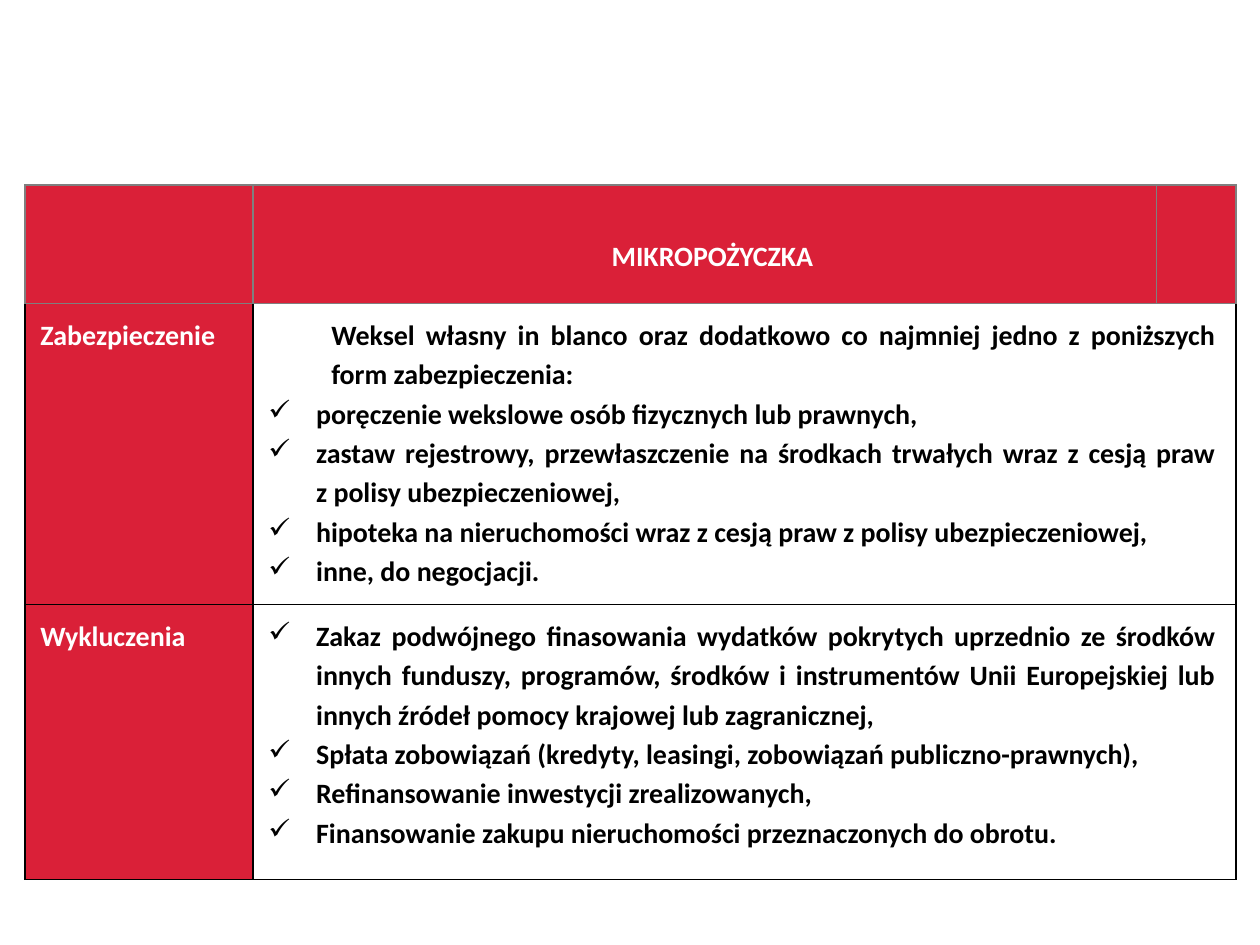
from dataclasses import dataclass

from lxml.etree import SubElement
from pptx import Presentation
from pptx.dml.color import RGBColor
from pptx.enum.text import PP_ALIGN as Align
from pptx.oxml.ns import qn
from pptx.util import Inches, Pt

COLORS = {"red": "DA2038", "white": "FFFFFF", "black": "000000", "gray": "7F7F7F"}
LEFT = 0.2
HEADER_TOP = 1.47
HEADER_HEIGHT = 0.94
LABEL_WIDTH = 1.81
CONTENT_WIDTH = 7.8
END_WIDTH = 0.63


@dataclass
class Line:
    text: str
    color: str = "black"
    align: Align = Align.JUSTIFY
    margin: float = 0.38
    bullet: str = "✓"


@dataclass
class CellContent:
    lines: list[Line]
    fill: str | None = None
    top_inset: float = 0.08


def label(text: str) -> CellContent:
    return CellContent([Line(text, "white", Align.LEFT, 0, "")], "red")


def add_line(para, text: str, *, color: str, align: Align, margin: float, bullet: str) -> None:
    properties = para._p.get_or_add_pPr()
    properties.set("marL", str(Inches(margin)))
    properties.set("indent", str(Inches(-margin if bullet else 0)))
    if bullet:
        SubElement(properties, qn("a:buChar")).set("char", bullet)
    para.alignment = align
    para.line_spacing = 1.15
    para.text = text
    for span in para.runs:
        span.font.name = "Calibri"
        span.font.size = Pt(16)
        span.font.bold = True
        span.font.color.rgb = RGBColor.from_string(COLORS[color])


def set_borders(cell, color: str) -> None:
    properties = cell._tc.get_or_add_tcPr()
    for side in ("lnL", "lnR", "lnT", "lnB"):
        border = SubElement(properties, qn(f"a:{side}"), w=str(Pt(1)))
        fill = SubElement(border, qn("a:solidFill"))
        SubElement(fill, qn("a:srgbClr"), val=COLORS[color])


def fill_cell(cell, content: CellContent, border: str) -> None:
    set_borders(cell, border)
    if content.fill:
        cell.fill.solid()
        cell.fill.fore_color.rgb = RGBColor.from_string(COLORS[content.fill])
    else:
        cell.fill.background()
    cell.margin_left, cell.margin_right = Inches(0.12), Inches(0.16)
    cell.margin_top, cell.margin_bottom = Inches(content.top_inset), Inches(0.08)
    frame = cell.text_frame
    for index, line in enumerate(content.lines):
        para = frame.add_paragraph() if index else frame.paragraphs[0]
        add_line(para, line.text, color=line.color, align=line.align,
                 margin=line.margin, bullet=line.bullet)


def add_grid(page, top: float, widths: list[float], heights: list[float],
             rows: list[list[CellContent]], border: str) -> None:
    table = page.shapes.add_table(
        len(heights), len(widths), Inches(LEFT), Inches(top),
        Inches(sum(widths)), Inches(sum(heights))).table
    table.first_row = table.horz_banding = False
    for column, width in zip(table.columns, widths):
        column.width = Inches(width)
    for row, height, contents in zip(table.rows, heights, rows):
        row.height = Inches(height)
        for cell, content in zip(row.cells, contents):
            fill_cell(cell, content, border)


def main() -> None:
    deck = Presentation()
    deck.slide_width, deck.slide_height = Inches(10), Inches(7.5)
    page = deck.slides.add_slide(deck.slide_layouts[6])

    security = CellContent([
        Line("Weksel własny in blanco oraz dodatkowo co najmniej jedno z poniższych "
             "form zabezpieczenia:", margin=0.5, bullet=""),
        Line("poręczenie wekslowe osób fizycznych lub prawnych,"),
        Line("zastaw rejestrowy, przewłaszczenie na środkach trwałych wraz z cesją praw\v"
             "z polisy ubezpieczeniowej,"),
        Line("hipoteka na nieruchomości wraz z cesją praw z polisy ubezpieczeniowej,"),
        Line("inne, do negocjacji."),
    ])
    exclusions = CellContent([
        Line("Zakaz podwójnego finasowania wydatków pokrytych uprzednio ze środków "
             "innych funduszy, programów, środków i instrumentów Unii Europejskiej lub "
             "innych źródeł pomocy krajowej lub zagranicznej,"),
        Line("Spłata zobowiązań (kredyty, leasingi, zobowiązań publiczno-prawnych),"),
        Line("Refinansowanie inwestycji zrealizowanych,"),
        Line("Finansowanie zakupu nieruchomości przeznaczonych do obrotu."),
    ])
    add_grid(page, HEADER_TOP + HEADER_HEIGHT, [LABEL_WIDTH, CONTENT_WIDTH], [2.39, 2.18],
             [[label("Zabezpieczenie"), security], [label("Wykluczenia"), exclusions]], "black")

    title = CellContent([Line("MIKROPOŻYCZKA", "white", Align.CENTER, 0.16, "")], "red", 0.39)
    blank = CellContent([], "red")
    add_grid(page, HEADER_TOP, [LABEL_WIDTH, CONTENT_WIDTH - END_WIDTH, END_WIDTH],
             [HEADER_HEIGHT], [[blank, title, blank]], "gray")
    deck.save("out.pptx")


if __name__ == "__main__":
    main()
